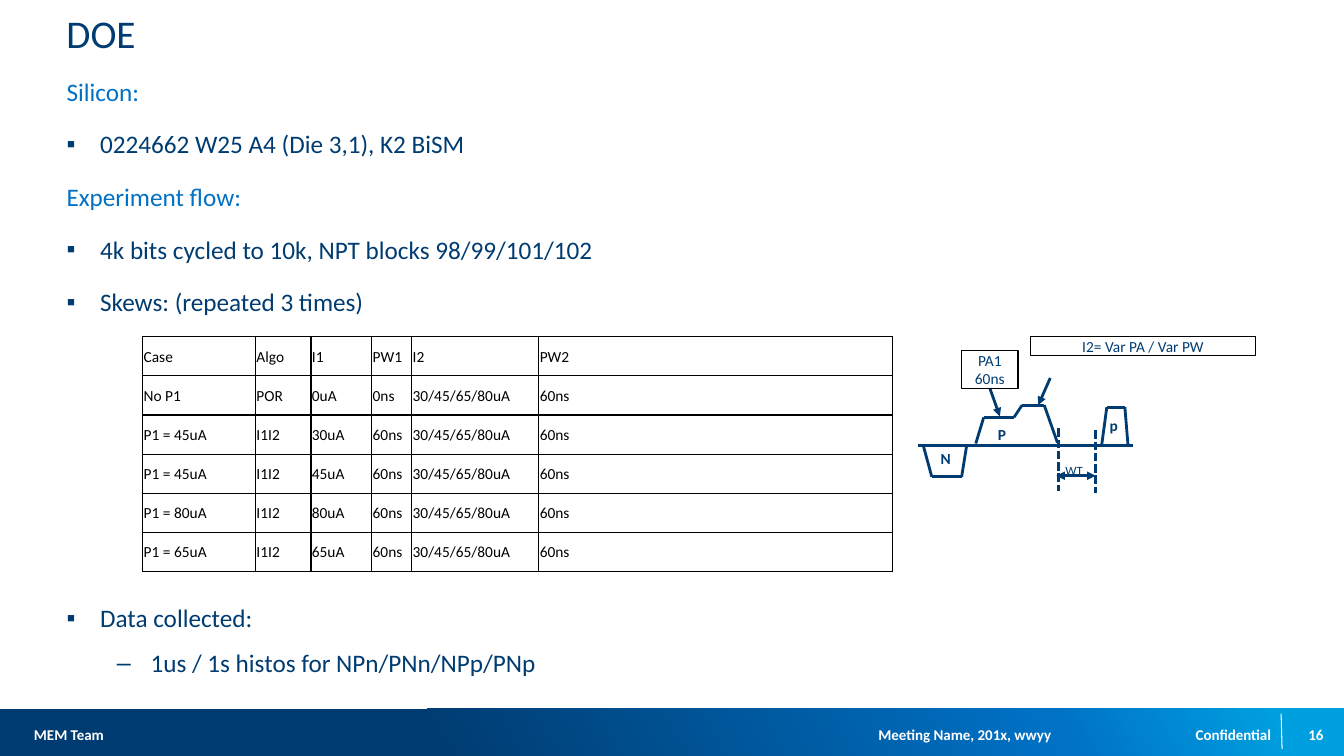
import dataclasses
import copy
import itertools

import pptx
import pptx.dml.color
import pptx.enum.dml
import pptx.enum.shapes
import pptx.enum.text
import pptx.oxml
import pptx.oxml.ns
import pptx.util

Pt = pptx.util.Pt
rgb = pptx.dml.color.RGBColor.from_string
qn = pptx.oxml.ns.qn
SubElement = pptx.oxml.xmlchemy.OxmlElement
Align = pptx.enum.text.PP_ALIGN
Anchor = pptx.enum.text.MSO_ANCHOR
RECTANGLE = pptx.enum.shapes.MSO_SHAPE.RECTANGLE
STRAIGHT = pptx.enum.shapes.MSO_CONNECTOR.STRAIGHT


@dataclasses.dataclass(frozen=True)
class Theme:
    font: str = "Calibri"
    bullet_font: str = "Arial"
    navy: str = "003C71"
    blue: str = "0071C5"
    sky: str = "009FDF"
    black: str = "000000"
    white: str = "FFFFFF"
    title: float = 28
    body: float = 18
    label: float = 11
    footer: float = 10.7
    wait: float = 9


theme = Theme()
deck = pptx.Presentation()
deck.slide_width, deck.slide_height = Pt(960), Pt(540)
slide = deck.slides.add_slide(deck.slide_layouts[6])


def write(frame, lines, size, color=theme.navy, bold=False, align=Align.LEFT,
          anchor=Anchor.TOP, wrap=True):
    """Fill a text frame without insets, one paragraph per line."""
    frame.margin_left = frame.margin_right = frame.margin_top = frame.margin_bottom = 0
    frame.word_wrap, frame.vertical_anchor = wrap, anchor
    for index, line in enumerate(lines):
        paragraph = frame.paragraphs[0] if index == 0 else frame.add_paragraph()
        paragraph.alignment = align
        run = paragraph.add_run()
        run.text = line
        run.font.name, run.font.size, run.font.bold = theme.font, Pt(size), bold
        run.font.color.rgb = rgb(color)


def draw_line(start, end, color=theme.navy, width=2, dashed=False, arrows=()):
    """Draw a straight line; arrows may hold headEnd and tailEnd."""
    line = slide.shapes.add_connector(STRAIGHT, *map(Pt, start + end))
    line.line.color.rgb, line.line.width = rgb(color), Pt(width)
    if dashed:
        line.line.dash_style = pptx.enum.dml.MSO_LINE.SQUARE_DOT
    properties = line._element.spPr
    for arrow in arrows:
        tip = SubElement(f"a:{arrow}")
        tip.set("type", "triangle")
        properties.find(qn("a:ln")).append(tip)
    properties.append(SubElement("a:effectLst"))


# Footer
band = slide.shapes.add_shape(RECTANGLE, 0, Pt(506.2), Pt(960), Pt(33.8))
band.shadow.inherit = False
band.line.fill.background()
band.fill.gradient()
band.fill.gradient_angle = 29
stop_list = band._element.spPr.find(qn("a:gradFill")).find(qn("a:gsLst"))
stop_list.append(copy.deepcopy(stop_list[-1]))
band_colors = [(0.32, theme.navy), (0.78, theme.blue), (0.95, theme.sky)]
for stop, (position, color) in zip(band.fill.gradient_stops, band_colors):
    stop.position = position
    stop.color.rgb = rgb(color)
draw_line((915.1, 509.8), (915.8, 535), theme.white, 0.75)
for text, left, width in [("MEM Team", 5.8, 68.4),
                          ("Meeting Name, 201x, wwyy", 494, 257),
                          ("Confidential", 808, 100),
                          ("16", 920, 25.4)]:
    footer = slide.shapes.add_textbox(Pt(left), Pt(510.3), Pt(width), Pt(28.8))
    write(footer.text_frame, [text], theme.footer, theme.white, True, Align.RIGHT, Anchor.MIDDLE)

# Title and body: (text, colour, bullet, left margin, space before)
title = slide.shapes.add_textbox(Pt(47.5), Pt(6.5), Pt(864), Pt(32.4))
write(title.text_frame, ["DOE"], theme.title)

setup = [("Silicon:", theme.blue, None, 0, 16),
         ("0224662 W25 A4 (Die 3,1), K2 BiSM", theme.navy, "▪", 24, 16),
         ("Experiment flow:", theme.blue, None, 0, 16),
         ("4k bits cycled to 10k, NPT blocks 98/99/101/102", theme.navy, "▪", 24, 16),
         ("Skews: (repeated 3 times)", theme.navy, "▪", 24, 16)]
collected = [("Data collected:", theme.navy, "▪", 24, 16),
             ("1us / 1s histos for NPn/PNn/NPp/PNp", theme.navy, "–", 60, 10.7)]
for section, top, height in [(setup, 54.3, 176), (collected, 430.2, 56)]:
    body = slide.shapes.add_textbox(Pt(47.5), Pt(top), Pt(867.6), Pt(height)).text_frame
    write(body, [item[0] for item in section], theme.body)
    for index, (text, color, bullet, margin, space) in enumerate(section):
        paragraph = body.paragraphs[index]
        paragraph.runs[0].font.color.rgb = rgb(color)
        if bullet:
            properties = paragraph._p.get_or_add_pPr()
            properties.set("marL", str(Pt(margin)))
            properties.set("indent", str(Pt(-24)))
            for tag, key, value in [("a:buFont", "typeface", theme.bullet_font),
                                    ("a:buChar", "char", bullet)]:
                mark = SubElement(tag)
                mark.set(key, value)
                properties.append(mark)
        if index:
            paragraph.space_before = Pt(space)

# Skew table
skews = [("Case", "Algo", "I1", "PW1", "I2", "PW2"),
         ("No P1", "POR", "0uA", "0ns", "30/45/65/80uA", "60ns")]
for current in (30, 45, 80, 65):
    case = 45 if current == 30 else current
    skews.append((f"P1 = {case}uA", "I1I2", f"{current}uA", "60ns", "30/45/65/80uA", "60ns"))
column_widths = [80.6, 39.6, 43.4, 28.6, 90.8, 252.6]
skew_table = slide.shapes.add_table(len(skews), len(column_widths), Pt(101.9), Pt(240.5),
                                    Pt(sum(column_widths)), Pt(28 * len(skews))).table
skew_table.first_row = skew_table.horz_banding = False
for column, width in zip(skew_table.columns, column_widths):
    column.width = Pt(width)
for row, values in zip(skew_table.rows, skews):
    row.height = Pt(28)
    for cell, value in zip(row.cells, values):
        write(cell.text_frame, [value], theme.label, theme.black)
        cell.vertical_anchor = Anchor.MIDDLE
        cell.margin_left = cell.margin_right = cell.margin_top = Pt(0.7)
        cell.margin_bottom = 0
        for side in ("lnL", "lnR", "lnT", "lnB"):
            border = SubElement(f"a:{side}")
            border.set("w", str(Pt(1)))
            fill = SubElement("a:solidFill")
            ink = SubElement("a:srgbClr")
            ink.set("val", theme.black)
            fill.append(ink)
            border.append(fill)
            cell._tc.get_or_add_tcPr().append(border)
        cell.fill.background()

# Pulse diagram
draw_line((655.9, 318.2), (809.3, 318.2))
n_pulse = [(659.5, 318.2), (665.6, 340.6), (686.9, 340.6), (690.5, 318.2)]
program_pulse = [(697, 316.8), (702.7, 298.1), (724.3, 298.1),
                 (730.1, 289.4), (745.9, 289.4), (755.3, 316.1)]
p_pulse = [(787, 317.5), (790.6, 290.9), (803.5, 290.9), (805.7, 317.5)]
for pulse in (n_pulse, program_pulse, p_pulse):
    for start, end in itertools.pairwise(pulse):
        draw_line(start, end)
for x, top in [(756, 306), (782.6, 307.4)]:
    draw_line((x, top), (x, top + 44.6), dashed=True)
draw_line((754.6, 339.8), (782.6, 339.8), arrows=("headEnd", "tailEnd"))
draw_line((707, 277.2), (714.2, 297.4), arrows=("tailEnd",))
draw_line((750.2, 270), (741.6, 289.4), arrows=("tailEnd",))

for text, left, top, width, size, bold in [("WT", 761, 330.5, 14.4, theme.wait, False),
                                           ("N", 671.8, 321.1, 7.9, theme.label, True),
                                           ("P", 712.8, 303.8, 7.2, theme.label, True),
                                           ("p", 792.7, 297.4, 7.2, theme.label, True)]:
    label = slide.shapes.add_textbox(Pt(left), Pt(top), Pt(width), Pt(size * 1.22))
    write(label.text_frame, [text], size, bold=bold, wrap=False)

for lines, left, top, width, height in [(["PA1", "60ns"], 686.9, 250.6, 40.3, 26.8),
                                        (["I2= Var PA / Var PW"], 736.2, 240.5, 160.6, 13.5)]:
    callout = slide.shapes.add_shape(RECTANGLE, Pt(left), Pt(top), Pt(width), Pt(height))
    callout.shadow.inherit = False
    callout.fill.background()
    callout.line.color.rgb, callout.line.width = rgb(theme.black), Pt(0.75)
    write(callout.text_frame, lines, theme.label, align=Align.CENTER)

deck.save("out.pptx")
